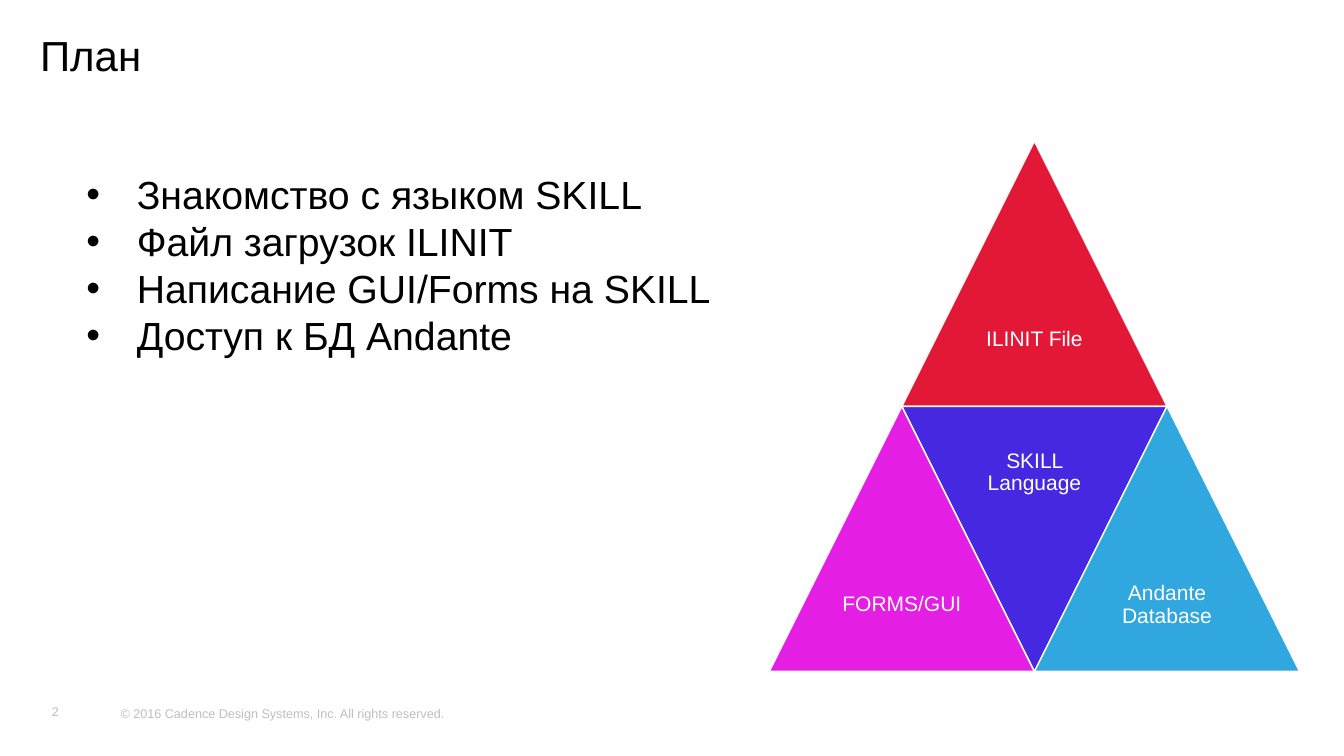
from lxml.etree import SubElement
from pptx import Presentation
from pptx.dml.color import RGBColor
from pptx.enum.shapes import MSO_SHAPE as Shape
from pptx.enum.text import MSO_ANCHOR as Anchor, PP_ALIGN as Align
from pptx.oxml.ns import qn
from pptx.util import Cm, Pt

WHITE, BLACK = "FFFFFF", "000000"


def color(code):
    return RGBColor.from_string(code)


class Page:
    font = "Arial"
    indent = 1.27

    def __init__(self, deck):
        self.slide = deck.slides.add_slide(deck.slide_layouts[6])
        self.shapes = self.slide.shapes

    def text(self, lines, box, size, tint=BLACK, align=Align.LEFT, anchor=Anchor.TOP,
             spacing=None, inset=None, bullet=None, group=None):
        """Add a text box with one paragraph per line, on the slide or in a group."""
        shapes = group.shapes if group else self.shapes
        frame = shapes.add_textbox(*map(Cm, box)).text_frame
        frame.word_wrap = True
        frame.vertical_anchor = anchor
        if inset is not None:
            frame.margin_left = frame.margin_right = Cm(inset)
            frame.margin_top = frame.margin_bottom = Cm(inset)
        for i, line in enumerate(lines):
            para = frame.add_paragraph() if i else frame.paragraphs[0]
            if bullet:
                self.mark(para, bullet)
            para.alignment = align
            if spacing:
                para.line_spacing = spacing
            run = para.add_run()
            run.text = line
            run.font.name = self.font
            run.font.size = Pt(size)
            run.font.color.rgb = color(tint)

    def mark(self, para, bullet):
        """Give a paragraph a bullet and a hanging indent."""
        props = para._p.get_or_add_pPr()
        props.set("marL", str(Cm(self.indent)))
        props.set("indent", str(-Cm(self.indent)))
        SubElement(props, qn("a:buFont"), typeface=self.font)
        SubElement(props, qn("a:buChar"), char=bullet)

    def triangle(self, group, label, left, top, side, fill, flip=False):
        """Add a triangle with its label in the wide half."""
        shape = group.shapes.add_shape(
            Shape.ISOSCELES_TRIANGLE, *map(Cm, (left, top, side, side)))
        shape.shadow.inherit = False
        shape.fill.solid()
        shape.fill.fore_color.rgb = color(fill)
        shape.line.color.rgb = color(WHITE)
        shape.line.width = Pt(1)
        shape.rotation = 180 if flip else 0
        half = side / 2
        box = (left + side / 4, top if flip else top + half, half, half)
        self.text([label], box, 15, WHITE, Align.CENTER, Anchor.MIDDLE,
                  spacing=0.9, inset=0.15, group=group)


def main():
    deck = Presentation()
    deck.slide_width, deck.slide_height = Cm(33.87), Cm(19.05)
    page = Page(deck)

    page.text(["2"], (0.94, 17.6, 0.91, 0.66), 9, "BCBCBC", Align.CENTER, Anchor.MIDDLE)
    page.text(["© 2016 Cadence Design Systems, Inc. All rights reserved."],
              (2.79, 17.65, 11.73, 0.66), 9, "BFBFBF", anchor=Anchor.MIDDLE)
    page.text(["План"], (0.76, 0.76, 32.26, 2.54), 30, spacing=0.9)

    left, top, side = 19.39, 3.56, 6.68
    # Label, column in half sides, row, fill, upside down
    parts = [
        ("ILINIT File", 1, 0, "E31837", False),
        ("FORMS/GUI", 0, 1, "E41EE3", False),
        ("SKILL Language", 1, 1, "4628E1", True),
        ("Andante Database", 2, 1, "31A7DF", False),
    ]
    group = page.shapes.add_group_shape()
    for label, col, row, fill, flip in parts:
        page.triangle(group, label, left + col * side / 2, top + row * side,
                      side, fill, flip)

    topics = [
        "Знакомство с языком SKILL",
        "Файл загрузок ILINIT",
        "Написание GUI/Forms на SKILL",
        "Доступ к БД Andante",
    ]
    page.text(topics, (1.93, 4.17, 16.79, 5.05), 28, bullet="•")

    deck.save("out.pptx")


if __name__ == "__main__":
    main()
